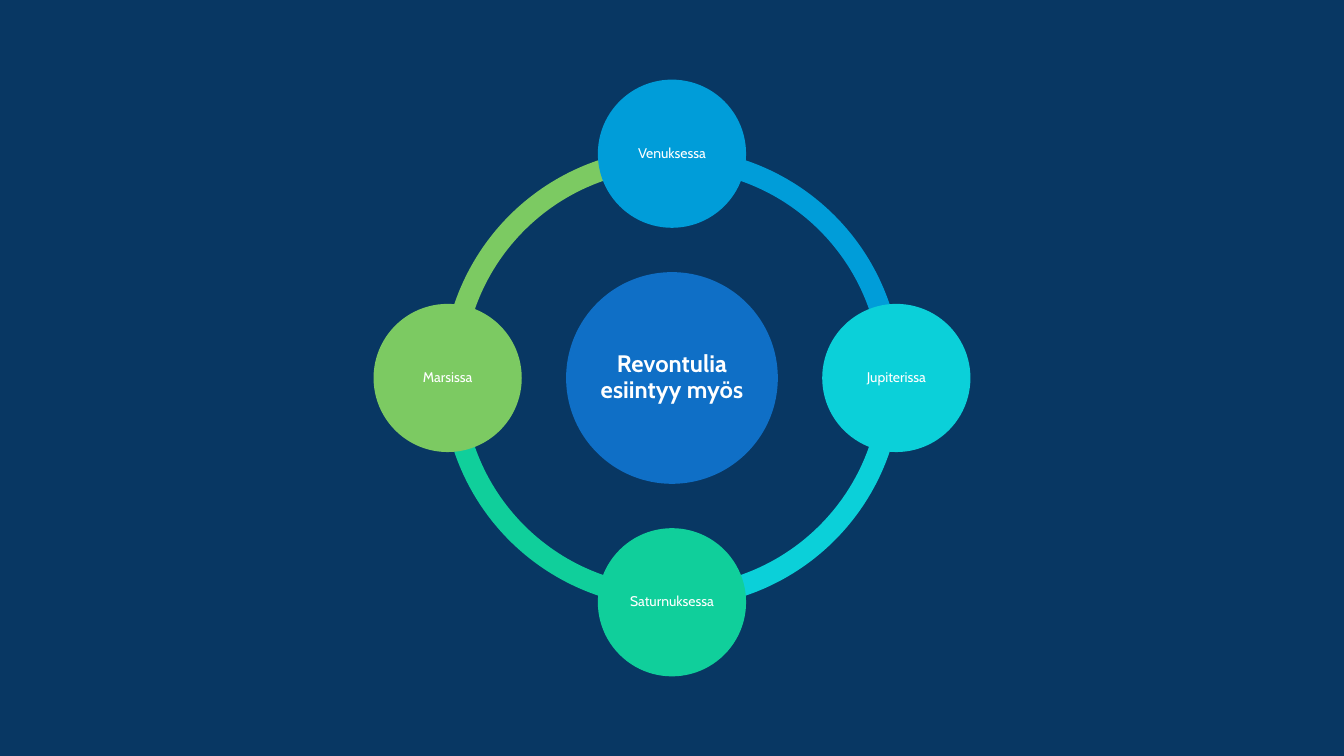
from math import cos, pi, sin

from pptx import Presentation
from pptx.dml.color import RGBColor
from pptx.enum.shapes import MSO_SHAPE as Shape
from pptx.enum.text import MSO_ANCHOR as Anchor, PP_ALIGN as Align
from pptx.util import Inches, Pt

NAVY = RGBColor(0x08, 0x37, 0x63)
BLUE = RGBColor(0x0F, 0x6F, 0xC6)
SKY = RGBColor(0x00, 0x9D, 0xD9)
TURQUOISE = RGBColor(0x0B, 0xD0, 0xD9)
EMERALD = RGBColor(0x10, 0xCF, 0x9B)
GREEN = RGBColor(0x7C, 0xCA, 0x62)
WHITE = RGBColor(0xFF, 0xFF, 0xFF)

PLANETS = [
    ("Venuksessa", SKY),
    ("Jupiterissa", TURQUOISE),
    ("Saturnuksessa", EMERALD),
    ("Marsissa", GREEN),
]

presentation = Presentation()
presentation.slide_width = Inches(13.33)
presentation.slide_height = Inches(7.5)
slide = presentation.slides.add_slide(presentation.slide_layouts[6])
slide.background.fill.solid()
slide.background.fill.fore_color.rgb = NAVY

center_x = presentation.slide_width / 2
center_y = presentation.slide_height / 2
ring_diameter = Inches(4.56)
hub_diameter = Inches(2.1)
planet_diameter = Inches(1.47)
orbit_radius = Inches(2.225)
FULL_TURN = 216
QUARTER_TURN = FULL_TURN / 4

diagram = slide.shapes.add_group_shape().shapes


def add_centered(kind, x, y, diameter, color):
    left, top = int(x - diameter / 2), int(y - diameter / 2)
    shape = diagram.add_shape(kind, left, top, diameter, diameter)
    shape.shadow.inherit = False
    shape.fill.solid()
    shape.fill.fore_color.rgb = color
    shape.line.fill.background()
    return shape


def add_label(shape, text, size, bold, inset):
    frame = shape.text_frame
    frame.text = text
    frame.word_wrap = True
    frame.vertical_anchor = Anchor.MIDDLE
    frame.margin_left = frame.margin_right = inset
    frame.margin_top = frame.margin_bottom = inset
    paragraph = frame.paragraphs[0]
    paragraph.alignment = Align.CENTER
    paragraph.line_spacing = 0.9
    font = paragraph.runs[0].font
    font.name = "Cabin"
    font.size = Pt(size)
    font.bold = bold
    font.color.rgb = WHITE


for index, (name, color) in reversed(list(enumerate(PLANETS))):
    arc = add_centered(Shape.BLOCK_ARC, center_x, center_y, ring_diameter, color)
    arc.adjustments[0] = (index + 3) * QUARTER_TURN % FULL_TURN
    arc.adjustments[1] = index * QUARTER_TURN
    arc.adjustments[2] = 0.046

hub = add_centered(Shape.OVAL, center_x, center_y, hub_diameter, BLUE)
add_label(hub, "Revontulia esiintyy myös", 17, True, Inches(0.02))

for index, (name, color) in enumerate(PLANETS):
    angle = index * pi / 2
    x = center_x + orbit_radius * sin(angle)
    y = center_y - orbit_radius * cos(angle)
    planet = add_centered(Shape.OVAL, x, y, planet_diameter, color)
    add_label(planet, name, 10, False, Inches(0.01))

presentation.save("out.pptx")
